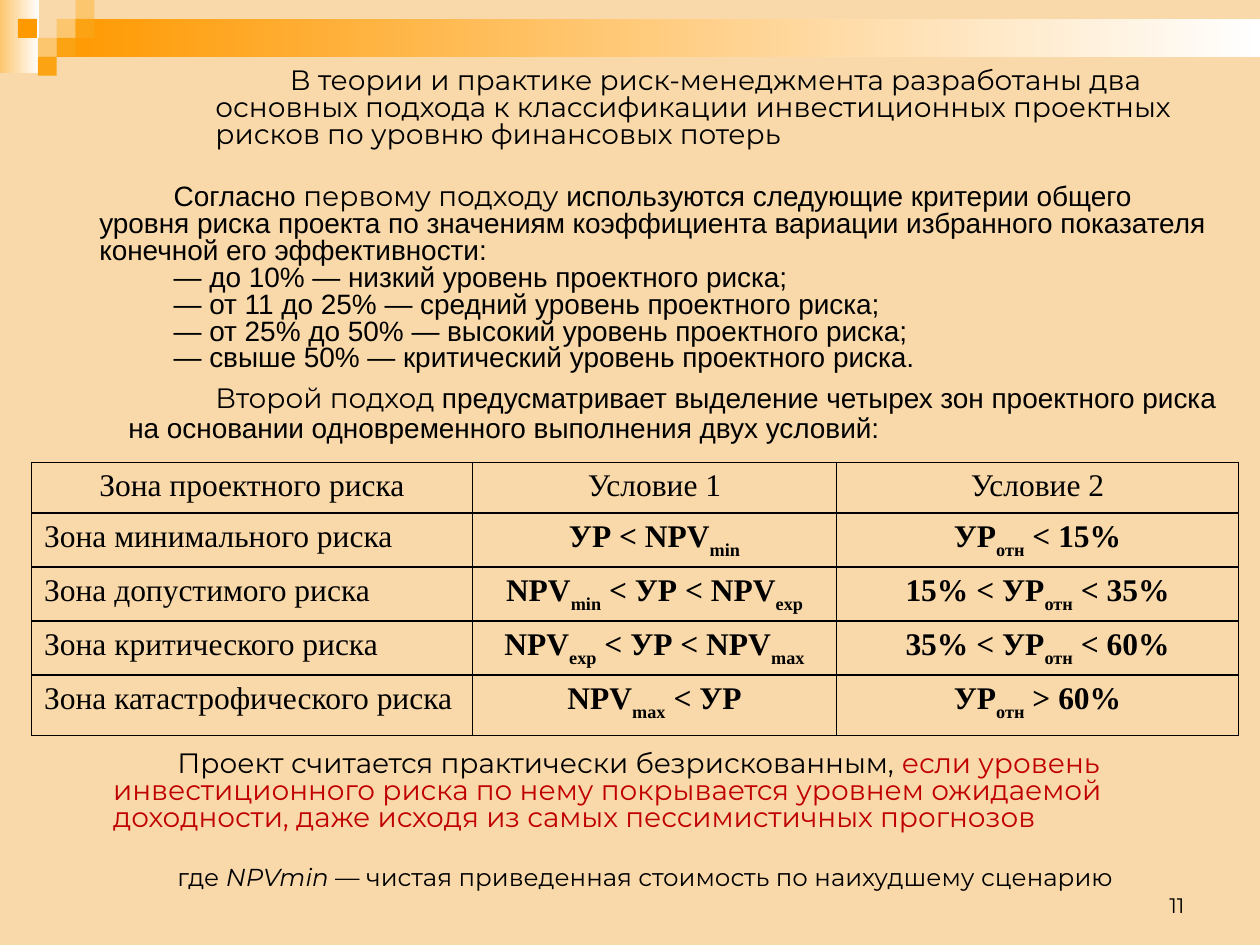
from pptx import Presentation
from pptx.dml.color import RGBColor as RGB
from pptx.enum.shapes import MSO_SHAPE as SHAPE
from pptx.enum.text import MSO_ANCHOR as ANCHOR, MSO_AUTO_SIZE as AUTO, PP_ALIGN as ALIGN
from pptx.oxml.ns import qn
from pptx.util import Inches, Pt
from lxml.etree import SubElement

COLORS = {"background": "F9D9A9", "orange": "FF9900", "amber": "FBA313",
          "sand": "FCC66E", "white": "FFFFFF", "ink": "000000", "accent": "C00000"}
SANS, ARIAL, SERIF = "Montserrat", "Arial", "Times New Roman"
STEP = 0.15  # side of one square of the corner mosaic

# Zone, condition 1, condition 2; "_" marks a subscript part
RISK_ZONES = [
    (["Зона проектного риска"], ["Условие 1"], ["Условие 2"]),
    (["Зона минимального риска"], ["УР < NPV", "_min"], ["УР", "_отн", " < 15%"]),
    (["Зона допустимого риска"], ["NPV", "_min", " < УР < NPV", "_exp"],
     ["15% < УР", "_отн", " < 35%"]),
    (["Зона критического риска"], ["NPV", "_exp", " < УР < NPV", "_max"],
     ["35% < УР", "_отн", " < 60%"]),
    (["Зона катастрофического риска"], ["NPV", "_max", " < УР"],
     ["УР", "_отн", " > 60%"]),
]


def color(name):
    return RGB.from_string(COLORS[name])


def add_block(slide, left, top, width, height, start, end=None):
    """Rectangle with a plain fill, or a left-to-right gradient if end is given."""
    block = slide.shapes.add_shape(SHAPE.RECTANGLE, *map(Inches, (left, top, width, height)))
    block.shadow.inherit = False
    block.line.fill.background()
    if end:
        block.fill.gradient()
        block.fill.gradient_angle = 0
        for stop, name in zip(block.fill.gradient_stops, (start, end)):
            stop.color.rgb = color(name)
    else:
        block.fill.solid()
        block.fill.fore_color.rgb = color(start)


def add_run(paragraph, text, font=SANS, size=16, ink="ink", bold=False, italic=False):
    run = paragraph.add_run()
    run.text = text
    run.font.name, run.font.size = font, Pt(size)
    run.font.bold, run.font.italic = bold, italic
    run.font.color.rgb = color(ink)
    return run


def set_indent(paragraph, margin, first_line):
    props = paragraph._p.get_or_add_pPr()
    props.set("marL", str(Inches(margin)))
    props.set("indent", str(Inches(first_line)))
    SubElement(props, qn("a:buNone"))


def fill_text(box, paragraphs, indent, spacing):
    """Each paragraph is a list of (text, run options)."""
    frame = box.text_frame
    frame.word_wrap = True
    frame.auto_size = AUTO.NONE
    for number, runs in enumerate(paragraphs):
        paragraph = frame.add_paragraph() if number else frame.paragraphs[0]
        set_indent(paragraph, *indent)
        paragraph.line_spacing = spacing
        paragraph.space_before = Pt(0)
        for text, options in runs:
            add_run(paragraph, text, **options)
    return frame


def add_text(slide, area, paragraphs, indent=(0, 0), spacing=1.0):
    box = slide.shapes.add_textbox(*map(Inches, area))
    return fill_text(box, paragraphs, indent, spacing)


def add_borders(cell):
    props = cell._tc.get_or_add_tcPr()
    for index, side in enumerate(("lnL", "lnR", "lnT", "lnB")):
        line = props.makeelement(qn(f"a:{side}"), {"w": str(Pt(1))})
        fill = SubElement(line, qn("a:solidFill"))
        SubElement(fill, qn("a:srgbClr"), val=COLORS["ink"])
        props.insert(index, line)


def add_risk_table(slide):
    widths, heights = (3.5, 2.89, 3.19), (0.4, 0.38, 0.4, 0.4, 0.48)
    area = (0.25, 3.67, sum(widths), sum(heights))
    table = slide.shapes.add_table(len(heights), len(widths), *map(Inches, area)).table
    table.first_row = table.horz_banding = False
    for column, width in zip(table.columns, widths):
        column.width = Inches(width)
    for r, (row, height) in enumerate(zip(table.rows, heights)):
        row.height = Inches(height)
        for c, cell in enumerate(row.cells):
            cell.fill.background()
            add_borders(cell)
            paragraph = cell.text_frame.paragraphs[0]
            set_indent(paragraph, 0.38, -0.38)
            paragraph.alignment = ALIGN.JUSTIFY if r and not c else ALIGN.CENTER
            for part in RISK_ZONES[r][c]:
                run = add_run(paragraph, part.lstrip("_"), SERIF, 18, bold=bool(r and c))
                if part.startswith("_"):
                    run.font._element.set("baseline", "-30000")


def add_decoration(slide):
    add_block(slide, 0, 0, 0.31, 0.58, "sand", "white")
    add_block(slide, 3 * STEP, STEP, 10 - 3 * STEP, 2 * STEP, "orange", "white")
    mosaic = [(3, 1, "sand"), (4, 0, "sand"), (4, 1, "amber"), (2, 2, "sand"),
              (0.95, 1, "orange"), (3, 2, "amber"), (2, 3, "amber")]
    for column, row, name in mosaic:
        add_block(slide, column * STEP, row * STEP, STEP, STEP, name)


def main():
    deck = Presentation()
    deck.slide_width, deck.slide_height = Inches(10), Inches(7.5)
    slide = deck.slides.add_slide(deck.slide_layouts[1])
    slide.background.fill.solid()
    slide.background.fill.fore_color.rgb = color("background")
    title = slide.shapes.title
    title._element.getparent().remove(title._element)
    add_decoration(slide)

    # Introduction
    intro = slide.placeholders[1]
    intro.left, intro.top, intro.width, intro.height = map(Inches, (1.42, 0.5, 8.42, 0.92))
    fill_text(intro, [[("В теории и практике риск-менеджмента разработаны два основных "
                        "подхода к классификации инвестиционных проектных рисков по "
                        "уровню финансовых потерь", {})]], (0.19, 0.59), 0.8)

    # First approach with its risk levels
    arial = {"font": ARIAL}
    levels = ["до 10% — низкий", "от 11 до 25% — средний",
              "от 25% до 50% — высокий", "свыше 50% — критический"]
    first = [("Согласно ", arial), ("первому подходу", {}),
             (" используются следующие критерии общего уровня риска проекта по значениям "
              "коэффициента вариации избранного показателя конечной его эффективности:", arial)]
    level_lines = [[(f"— {level} уровень проектного риска{'.' if level == levels[-1] else ';'}",
                     arial)] for level in levels]
    add_text(slide, (0.5, 1.42, 9.33, 1.61), [first, *level_lines], (0.19, 0.59), 0.8)

    # Second approach with its risk zones
    second = [("Второй подход ", {}),
              ("предусматривает выделение четырех зон проектного риска на основании "
               "одновременного выполнения двух условий:", arial)]
    add_text(slide, (0.92, 3, 8.92, 1.08), [second], (0, 0.69), 0.9)
    add_risk_table(slide)

    # Conclusion and legend
    conclusion = [("Проект считается практически безрискованным, ", {}),
                  ("если уровень инвестиционного риска по нему покрывается уровнем ожидаемой "
                   "доходности, даже исходя из самых пессимистичных прогнозов",
                   {"ink": "accent"})]
    legend = [("где ", {"size": 14}), ("NPVmin", {"size": 14, "italic": True}),
              (" — чистая приведенная стоимость по наихудшему сценарию", {"size": 14})]
    closing = add_text(slide, (0.42, 5.92, 9.08, 1.22), [conclusion, legend], (0.38, 0.51), 0.8)
    closing.paragraphs[1].space_before = Pt(20)

    # Page number
    page = add_text(slide, (7.17, 6.83, 2.33, 0.5), [[("11", {"size": 12})]])
    page.vertical_anchor = ANCHOR.BOTTOM
    page.paragraphs[0].alignment = ALIGN.RIGHT

    deck.save("out.pptx")


if __name__ == "__main__":
    main()
